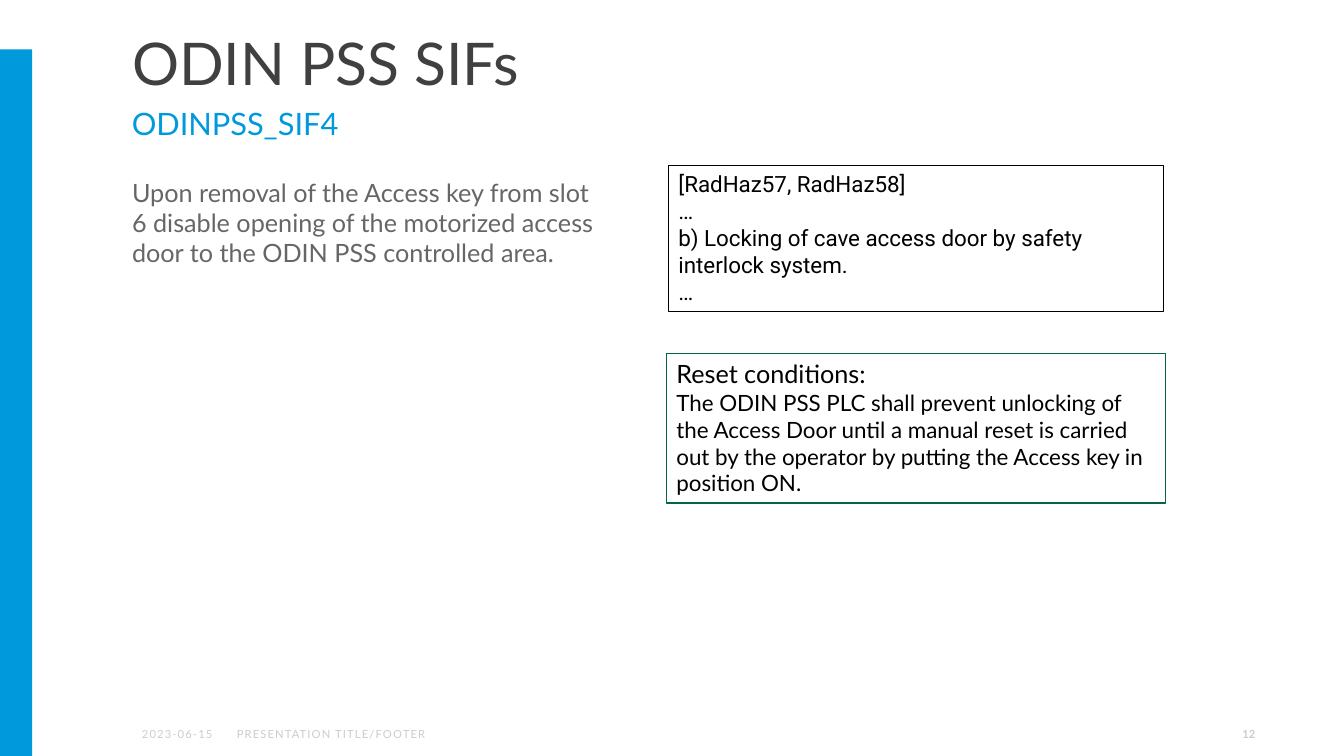
import pptx
import pptx.util
import pptx.dml.color
import pptx.enum.shapes
import pptx.enum.text

Inches = pptx.util.Inches
Pt = pptx.util.Pt
Align = pptx.enum.text.PP_ALIGN
Anchor = pptx.enum.text.MSO_ANCHOR

COLORS = {"blue": "0099DC", "title": "404040", "body": "666666", "footer": "CCCCCC",
          "green": "006646", "black": "000000", "white": "FFFFFF"}

# Content: each paragraph is (text, size)
TITLE = [("ODIN PSS SIFs", 42)]
SUBTITLE = [("ODINPSS_SIF4", 22)]
FUNCTION = [("Upon removal of the Access key from slot 6 disable opening of the motorized "
             "access door to the ODIN PSS controlled area.", 18)]
# (left, top, width, height), line colour, font, paragraphs
BOXES = [
    ((6.61, 3.51, 4.95, 1.48), "green", "Lato", [
        ("Reset conditions:", 18),
        ("The ODIN PSS PLC shall prevent unlocking of the Access Door until a manual reset "
         "is carried out by the operator by putting the Access key in position ON.", 16)]),
    ((6.63, 1.64, 4.91, 1.45), "black", "Roboto", [
        ("[RadHaz57, RadHaz58]", 16),
        ("…", 16),
        ("b) Locking of cave access door by safety interlock system.", 16),
        ("…", 16)]),
]
# text, left, width, alignment, bold, letter spacing in hundredths of a point
FOOTERS = [
    ("2023-06-15", 1.31, 0.91, Align.LEFT, False, 80),
    ("PRESENTATION TITLE/FOOTER", 2.25, 4.72, Align.LEFT, False, 80),
    ("12", 9.55, 3, Align.RIGHT, True, 0),
]
FOOTER_TOP, FOOTER_HEIGHT = 7.08, 0.4


def color(name):
    return pptx.dml.color.RGBColor.from_string(COLORS[name])


def place(shape, left, top, width, height):
    shape.left, shape.top = Inches(left), Inches(top)
    shape.width, shape.height = Inches(width), Inches(height)


def write(shape, paragraphs, color_name, font="Lato", insets=(0.1, 0.05, 0.1, 0.05),
          anchor=Anchor.TOP, align=Align.LEFT, bold=False, line_spacing=None, tracking=0):
    frame = shape.text_frame
    frame.word_wrap = True
    frame.auto_size = pptx.enum.text.MSO_AUTO_SIZE.NONE
    frame.vertical_anchor = anchor
    (frame.margin_left, frame.margin_top,
     frame.margin_right, frame.margin_bottom) = map(Inches, insets)
    for index, (text, size) in enumerate(paragraphs):
        paragraph = frame.add_paragraph() if index else frame.paragraphs[0]
        paragraph.alignment = align
        if line_spacing:
            paragraph.line_spacing = line_spacing
        run = paragraph.add_run()
        run.text = text
        run.font.name, run.font.size, run.font.bold = font, Pt(size), bold
        run.font.color.rgb = color(color_name)
        if tracking:
            run.font._element.set("spc", str(tracking))


def add_rectangle(slide, box, fill, line=None):
    shape = slide.shapes.add_shape(pptx.enum.shapes.MSO_SHAPE.RECTANGLE, *map(Inches, box))
    shape.shadow.inherit = False
    shape.fill.solid()
    shape.fill.fore_color.rgb = color(fill)
    if line:
        shape.line.color.rgb = color(line)
        shape.line.width = Pt(1)
    else:
        shape.line.fill.background()
    return shape


def add_text(slide, box, paragraphs, color_name, **style):
    shape = slide.shapes.add_textbox(*map(Inches, box))
    write(shape, paragraphs, color_name, **style)


def main():
    presentation = pptx.Presentation()
    presentation.slide_width, presentation.slide_height = Inches(13.33), Inches(7.5)
    slide = presentation.slides.add_slide(presentation.slide_layouts[5])

    # Side bar
    add_rectangle(slide, (0, 0.49, 0.32, 7.01), "blue")

    # Title and subtitle
    title = slide.shapes.title
    place(title, 1.21, 0.29, 10.24, 0.72)
    write(title, TITLE, "title", insets=(0.1, 0.05, 0.1, 0.02), line_spacing=0.9)
    add_text(slide, (1.21, 1.02, 10.24, 0.55), SUBTITLE, "blue", insets=(0.1, 0.02, 0.1, 0.05))

    # Safety function
    add_text(slide, (1.31, 1.71, 4.72, 5.21), FUNCTION, "body", insets=(0, 0.05, 0.02, 0.05))

    # Framed boxes
    for box, line, font, paragraphs in BOXES:
        write(add_rectangle(slide, box, "white", line), paragraphs, "black", font=font)

    # Footer
    for text, left, width, align, bold, tracking in FOOTERS:
        add_text(slide, (left, FOOTER_TOP, width, FOOTER_HEIGHT), [(text, 8)], "footer",
                 anchor=Anchor.MIDDLE, align=align, bold=bold, tracking=tracking)

    presentation.save("out.pptx")


if __name__ == "__main__":
    main()
